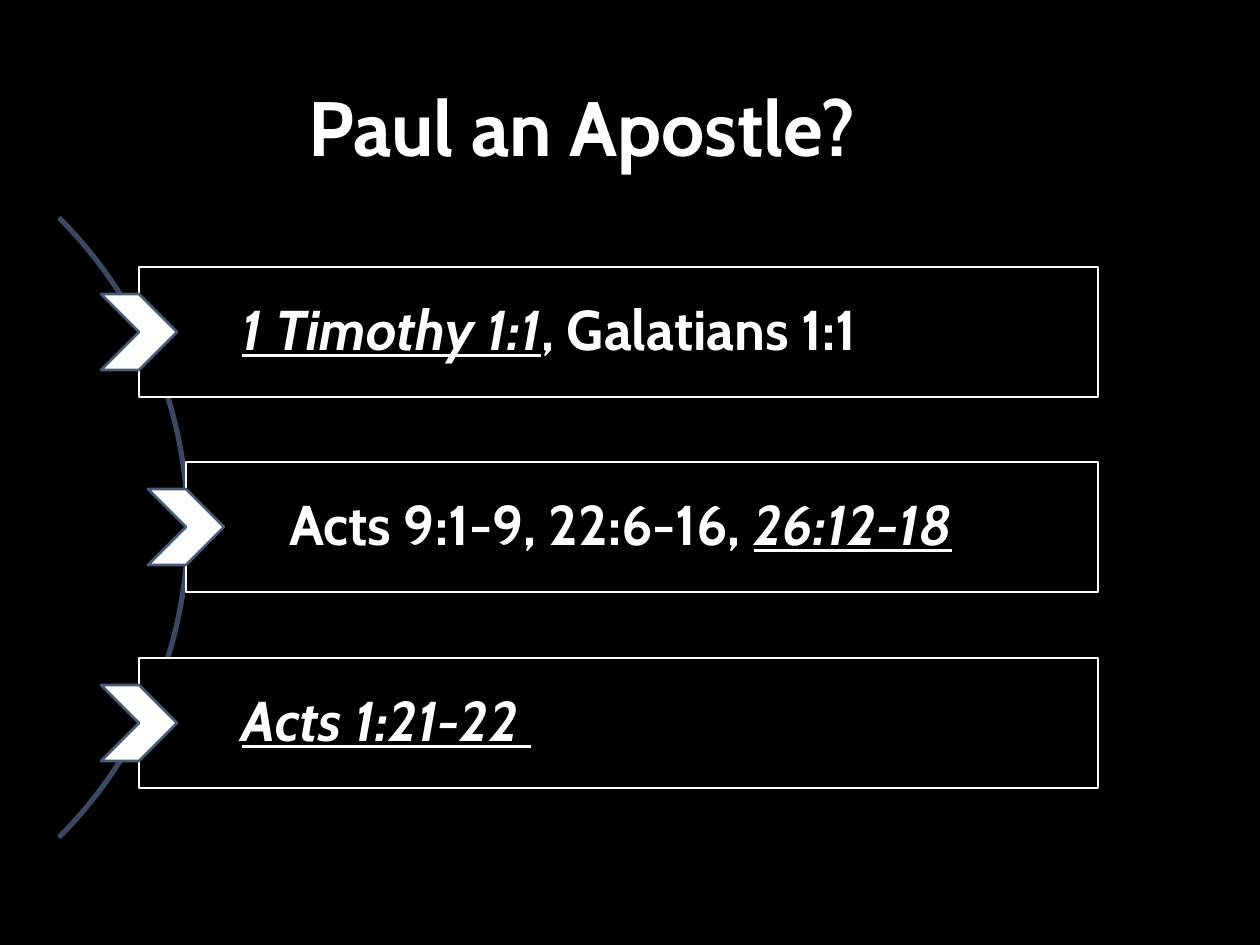
from pptx import Presentation
from pptx.dml.color import RGBColor
from pptx.enum.shapes import MSO_SHAPE as Shape
from pptx.enum.text import MSO_ANCHOR as Anchor, PP_ALIGN as Align
from pptx.util import Emu, Pt

TITLE = "Paul an Apostle?"
PASSAGES = [
    (139, [("1 Timothy 1:1", True), (", Galatians 1:1", False)]),
    (186, [("Acts 9:1-9, 22:6-16, ", False), ("26:12-18", True)]),
    (139, [("Acts 1:21-22 ", True)]),
]
COLORS = {"black": "000000", "white": "FFFFFF", "arc": "3B4862", "chevron": "4A5A7A"}
FONT = "Cabin"
FIRST_TOP, LAST_TOP, BOX_HEIGHT, BOX_RIGHT = 267, 658, 130, 1098
CHEVRON = 76


def px(length):
    return Emu(round(length * 914400 / 126))


def color(name):
    return RGBColor.from_string(COLORS[name])


def add_outlined(slide, kind, box, line, fill=None):
    shape = slide.shapes.add_shape(kind, *map(px, box))
    shape.shadow.inherit = False
    shape.line.color.rgb = color(line)
    shape.line.width = Pt(1.5)
    if fill:
        shape.fill.solid()
        shape.fill.fore_color.rgb = color(fill)
    else:
        shape.fill.background()
    return shape


def write(shape, runs, size, align=Align.LEFT, anchor=Anchor.MIDDLE,
          insets=(13, 6, 13, 6), spacing=1.0, before=0):
    frame = shape.text_frame
    frame.word_wrap = True
    frame.vertical_anchor = anchor
    (frame.margin_left, frame.margin_top,
     frame.margin_right, frame.margin_bottom) = map(px, insets)
    paragraph = frame.paragraphs[0]
    paragraph.alignment = align
    paragraph.line_spacing = spacing
    paragraph.space_before = Pt(before)
    for text, marked in runs:
        run = paragraph.add_run()
        run.text = text
        font = run.font
        font.name, font.size, font.bold = FONT, Pt(size), True
        font.italic = font.underline = marked
        font.color.rgb = color("white")


def main():
    deck = Presentation()
    deck.slide_width, deck.slide_height = px(1260), px(945)
    slide = deck.slides.add_slide(deck.slide_layouts[6])
    slide.background.fill.solid()
    slide.background.fill.fore_color.rgb = color("black")

    arc = add_outlined(slide, Shape.BLOCK_ARC, (-688, 89, 877, 877), "arc")
    for index, value in enumerate((189, 27, 0.003)):
        arc.adjustments[index] = value

    pitch = (LAST_TOP - FIRST_TOP) / (len(PASSAGES) - 1)
    for row, (left, runs) in enumerate(PASSAGES):
        top = round(FIRST_TOP + row * pitch)
        passage = add_outlined(slide, Shape.RECTANGLE,
                               (left, top, BOX_RIGHT - left, BOX_HEIGHT), "white", "black")
        write(passage, runs, 32, insets=(103, 11, 11, 11), spacing=0.9)
        chevron_box = (left - CHEVRON // 2, top + (BOX_HEIGHT - CHEVRON) // 2, CHEVRON, CHEVRON)
        add_outlined(slide, Shape.CHEVRON, chevron_box, "chevron", "white")

    title = slide.shapes.add_textbox(*map(px, (53, 73, 1058, 105)))
    write(title, [(TITLE, False)], 44, align=Align.CENTER, anchor=Anchor.BOTTOM, before=4)
    deck.save("out.pptx")


if __name__ == "__main__":
    main()
